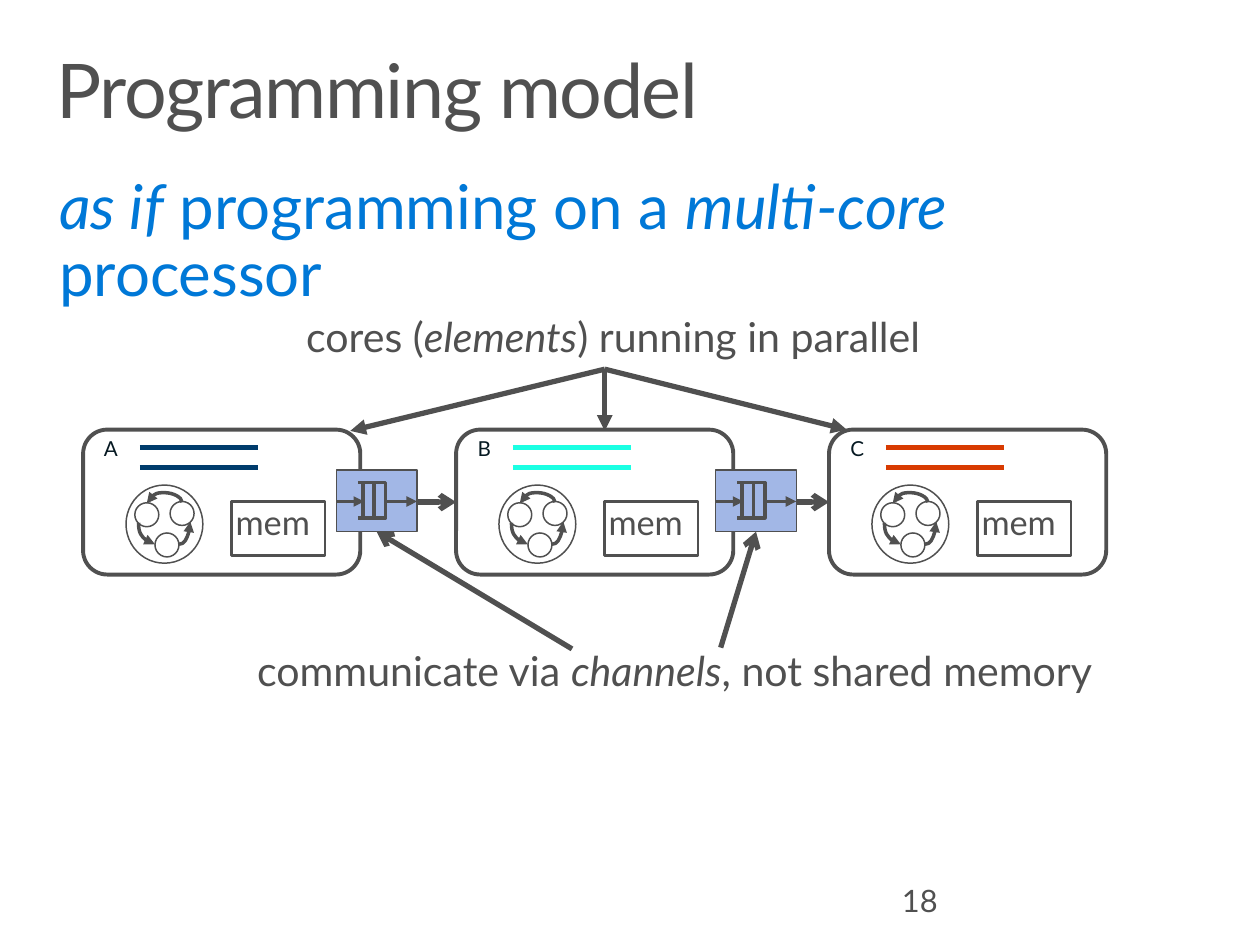
import pptx
import pptx.util
import pptx.dml.color
import pptx.enum.shapes
import pptx.enum.text
import pptx.oxml
import pptx.oxml.ns

Inches, Pt = pptx.util.Inches, pptx.util.Pt
SHAPE = pptx.enum.shapes.MSO_SHAPE
CONN = pptx.enum.shapes.MSO_CONNECTOR

GREY, WHITE, BLUE = "505050", "FFFFFF", "0078D7"
TITLE = "Programming model"
SUBTITLE = [("as if", True), (" programming on a ", False),
            ("multi-core", True), (" processor", False)]
CORES_LABEL = [("cores (", False), ("elements", True), (") running in parallel", False)]
CHANNELS_LABEL = [("communicate via ", False), ("channels", True),
                  (", not shared memory", False)]
CORES = [("A", "003C6C"), ("B", "1BFFE3"), ("C", "D83B01")]
CORE_LEFT, CORE_TOP, CORE_PITCH = 0.66, 3.41, 2.96
CORE_W, CORE_H = 2.2, 1.15
STATES = [(0.57, 0.82), (0.41, 0.58), (0.69, 0.57)]
CHANNELS_LEFT, CHANNEL_TOP = [2.67, 5.68], 3.73
CHANNEL_W, CHANNEL_H = 0.64, 0.49
CHANNEL_ARROWS = [(0, 0.22), (0.39, 0.64)]
QUEUE_SLOTS = [0.21, 0.3]
QUEUE_TOP, QUEUE_H = 0.1, 0.28
FORK, CORE_TARGETS = (4.8, 2.93), [(2.78, 3.42), (4.8, 3.42), (6.72, 3.41)]
CHANNEL_POINTERS = [(4.54, 5.15), (5.72, 5.14)]


def rgb(color):
    return pptx.dml.color.RGBColor.from_string(color)


def add_xml(parent, tag, **attrs):
    el = pptx.oxml.parse_xml(f"<a:{tag} {pptx.oxml.ns.nsdecls('a')}/>")
    for name, value in attrs.items():
        el.set(name, value)
    parent.append(el)


def box(shapes, kind, x, y, w, h, width, fill=None):
    sp = shapes.add_shape(kind, Inches(x), Inches(y), Inches(w), Inches(h))
    sp.shadow.inherit = False
    if fill:
        sp.fill.solid()
        sp.fill.fore_color.rgb = rgb(fill)
    else:
        sp.fill.background()
    sp.line.color.rgb = rgb(GREY)
    sp.line.width = Pt(width)
    return sp


def line(shapes, start, end, width=3, color=GREY, head=None, tail=None, kind=CONN.STRAIGHT):
    c = shapes.add_connector(kind, *(Inches(v) for v in (*start, *end)))
    c.line.color.rgb = rgb(color)
    c.line.width = Pt(width)
    ln = c.line._get_or_add_ln()
    for tag, arrow in (("headEnd", head), ("tailEnd", tail)):
        if arrow:
            add_xml(ln, tag, type=arrow)
    add_xml(c._element.spPr, "effectLst")
    return c


def write(sp, runs, size, color=GREY, inset=(0.1, 0.05), spacing=None, after=None, wrap=True):
    tf = sp.text_frame
    tf.word_wrap = wrap
    tf.vertical_anchor = pptx.enum.text.MSO_ANCHOR.TOP
    tf.margin_left = tf.margin_right = Inches(inset[0])
    tf.margin_top = tf.margin_bottom = Inches(inset[1])
    p = tf.paragraphs[0]
    p.alignment = pptx.enum.text.PP_ALIGN.LEFT
    p.line_spacing = spacing
    if after:
        p.space_after = Pt(after)
    for text, italic in runs:
        r = p.add_run()
        r.text = text
        r.font.name = "Lato"
        r.font.size = Pt(size)
        r.font.italic = italic
        r.font.color.rgb = rgb(color)


def label(s, x, y, w, h, runs, size, **options):
    sp = s.shapes.add_textbox(Inches(x), Inches(y), Inches(w), Inches(h))
    write(sp, runs, size, **options)


def caption(s, x, y, w, h, runs, size):
    label(s, x, y, w, h, runs, size, inset=(0.2, 0.16), spacing=0.9, after=5.9, wrap=False)


def add_state_machine(s, x, y):
    shapes = s.shapes.add_group_shape().shapes
    box(shapes, SHAPE.OVAL, x + 0.34, y + 0.44, 0.61, 0.62, 0.85)
    for dx, dy in STATES:
        box(shapes, SHAPE.OVAL, x + dx, y + dy, 0.19, 0.19, 0.85, WHITE)
    right = line(shapes, (x + 0.76, y + 0.91), (x + 0.85, y + 0.73), 2,
                 tail="triangle", kind=CONN.CURVE)
    left = line(shapes, (x + 0.57, y + 0.91), (x + 0.44, y + 0.74), 2,
                head="triangle", kind=CONN.CURVE)
    for c in (right, left):
        c._element.spPr.prstGeom.set("prst", "curvedConnector2")
    top = line(shapes, (x + 0.65, y + 0.72), (x + 0.64, y + 0.44), 2,
               tail="triangle", kind=CONN.CURVE)
    top._element.spPr.xfrm.set("rot", "16200000")
    guides = top._element.spPr.prstGeom.get_or_add_avLst()
    add_xml(guides, "gd", name="adj1", fmla="val -770000")


def add_core(s, i, name, color):
    x, y = CORE_LEFT + i * CORE_PITCH, CORE_TOP
    core = box(s.shapes, SHAPE.ROUNDED_RECTANGLE, x, y, CORE_W, CORE_H, 2.25, WHITE)
    label(s, x + 0.03, y, 1.63, 0.3, [(" " + name, False)], 11.8, color="061922")
    add_state_machine(s, x, y)
    for dy in (0.14, 0.3):
        line(s.shapes, (x + 0.45, y + dy), (x + 1.39, y + dy), color=color)
    box(s.shapes, SHAPE.RECTANGLE, x + 1.18, y + 0.57, 0.74, 0.43, 1.5, WHITE)
    caption(s, x + 1.01, y + 0.46, 1.01, 0.61, [("mem", False)], 19.6)
    return core


def add_channel(s, x):
    shapes, y = s.shapes.add_group_shape().shapes, CHANNEL_TOP
    channel = box(shapes, SHAPE.RECTANGLE, x, y, CHANNEL_W, CHANNEL_H, 0.75, "A2B7E6")
    for x1, x2 in CHANNEL_ARROWS:
        line(shapes, (x + x1, y + 0.25), (x + x2, y + 0.25), 2, tail="triangle")
    for dx in QUEUE_SLOTS:
        box(shapes, SHAPE.RECTANGLE, x + dx, y + QUEUE_TOP, 0.09, QUEUE_H, 2)
    for dy in (QUEUE_TOP, QUEUE_TOP + QUEUE_H):
        line(shapes, (x + 0.17, y + dy), (x + 0.26, y + dy), 2)
    return channel


def main():
    prs = pptx.Presentation()
    prs.slide_width, prs.slide_height = Inches(10), Inches(7.5)
    s = prs.slides.add_slide(prs.slide_layouts[5])

    title = s.shapes.title
    title.left, title.top, title.width, title.height = map(Inches, (0.29, 0.32, 9.41, 0.98))
    write(title, [(TITLE, False)], 43.1, inset=(0.16, 0.1), spacing=0.9)
    title.text_frame.paragraphs[0].runs[0].font._element.set("spc", "-80")
    label(s, 0.29, 1.3, 9.58, 0.74, SUBTITLE, 35.3, color=BLUE, inset=(0.18, 0.1), spacing=0.9)

    cores = [add_core(s, i, *core) for i, core in enumerate(CORES)]
    middle = CORE_TOP + CORE_H / 2
    for i, (source, target) in enumerate(zip(cores, cores[1:])):
        x = CORE_LEFT + i * CORE_PITCH
        c = line(s.shapes, (x + CORE_W, middle), (x + CORE_PITCH, middle), tail="arrow")
        c.begin_connect(source, 3)
        c.end_connect(target, 1)

    for x, start in zip(CHANNELS_LEFT, CHANNEL_POINTERS):
        channel = add_channel(s, x)
        end = (x + CHANNEL_W / 2, CHANNEL_TOP + CHANNEL_H)
        line(s.shapes, start, end, tail="arrow").end_connect(channel, 2)

    caption(s, 2.23, 2.36, 5.56, 0.67, CORES_LABEL, 23.5)
    caption(s, 1.84, 5.01, 7.18, 0.67, CHANNELS_LABEL, 23.5)
    for target in CORE_TARGETS:
        line(s.shapes, FORK, target, tail="triangle")
    label(s, 7.06, 6.95, 2.25, 0.4, [("18", False)], 17.6)
    prs.save("out.pptx")


if __name__ == "__main__":
    main()
